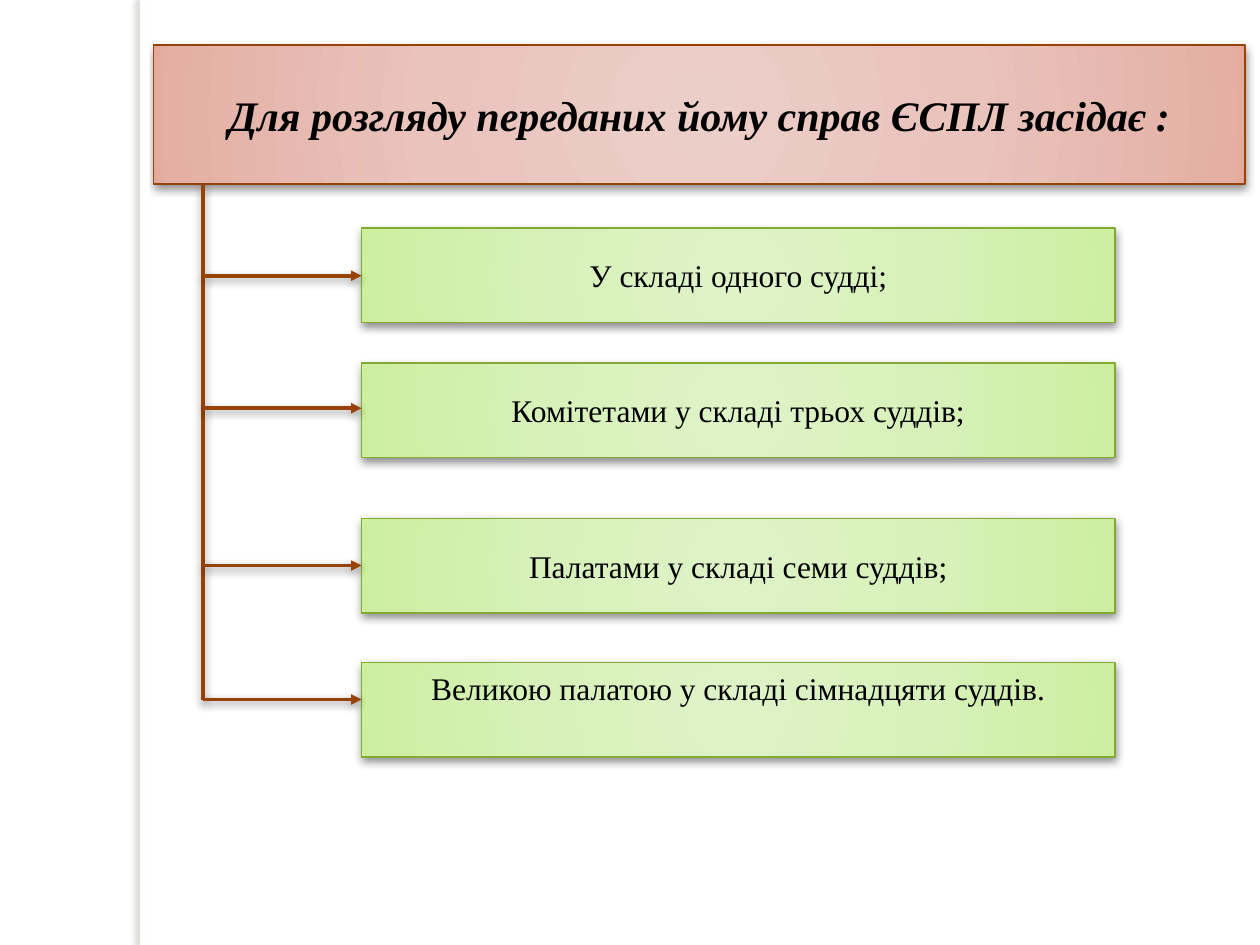
import pptx
import pptx.dml.color
import pptx.enum.shapes
import pptx.enum.text
import pptx.oxml
import pptx.oxml.ns
import pptx.util

Cm = pptx.util.Cm
Pt = pptx.util.Pt
RGBColor = pptx.dml.color.RGBColor
MSO_SHAPE = pptx.enum.shapes.MSO_SHAPE
MSO_ANCHOR = pptx.enum.text.MSO_ANCHOR

FONT = "Times New Roman"
BLACK = RGBColor(0x00, 0x00, 0x00)
WHITE = RGBColor(0xFF, 0xFF, 0xFF)
BROWN = RGBColor(0x96, 0x43, 0x05)
GREEN = RGBColor(0x84, 0xAA, 0x33)
STONE = RGBColor(0x73, 0x6F, 0x63)
PINKS = (
    (0, RGBColor(0xEC, 0xCE, 0xC9)),
    (50, RGBColor(0xE9, 0xC3, 0xBC)),
    (97, RGBColor(0xE4, 0xAF, 0xA4)),
    (100, RGBColor(0xE4, 0xA8, 0x9B)),
)
LIMES = (
    (0, RGBColor(0xDF, 0xF3, 0xC7)),
    (50, RGBColor(0xD8, 0xF1, 0xBA)),
    (97, RGBColor(0xCD, 0xEF, 0xA2)),
    (100, RGBColor(0xCA, 0xF1, 0x99)),
)
NS = pptx.oxml.ns.nsdecls("a")

STEM_X = 4.09
BOX_LEFT = 7.29
ROWS = (
    ("У складі одного судді;", 4.6, 5.56, MSO_ANCHOR.MIDDLE),
    ("Комітетами у складі трьох суддів;", 7.32, 8.23, MSO_ANCHOR.MIDDLE),
    ("Палатами у складі семи суддів;", 10.46, 11.4, MSO_ANCHOR.MIDDLE),
    ("Великою палатою у складі сімнадцяти суддів.", 13.36, 14.1, MSO_ANCHOR.TOP),
)


def add_shadow(s, color=BLACK, alpha=43, blur=5, dist=2, angle=90):
    s._element.spPr.append(pptx.oxml.parse_xml(
        f'<a:effectLst {NS}><a:outerShdw blurRad="{Pt(blur)}" dist="{Pt(dist)}" '
        f'dir="{angle * 60000}" algn="ctr" rotWithShape="0"><a:srgbClr val="{color}">'
        f'<a:alpha val="{alpha * 1000}"/></a:srgbClr></a:outerShdw></a:effectLst>'))


def set_panel(s, stops, line_color):
    gs = "".join(f'<a:gs pos="{pos * 1000}"><a:srgbClr val="{color}"/></a:gs>'
                 for pos, color in stops)
    s._element.spPr.append(pptx.oxml.parse_xml(
        f'<a:gradFill {NS} rotWithShape="1"><a:gsLst>{gs}</a:gsLst><a:path path="circle">'
        '<a:fillToRect l="50000" t="50000" r="50000" b="50000"/></a:path></a:gradFill>'))
    s.line.color.rgb = line_color
    s.line.width = Pt(0.75)
    add_shadow(s)


def set_text(s, text, size=18, bold=False, italic=False, anchor=MSO_ANCHOR.MIDDLE):
    tf = s.text_frame
    tf.word_wrap = True
    tf.auto_size = pptx.enum.text.MSO_AUTO_SIZE.NONE
    tf.vertical_anchor = anchor
    p = tf.paragraphs[0]
    p.alignment = pptx.enum.text.PP_ALIGN.CENTER
    r = p.add_run()
    r.text = text
    r.font.name = FONT
    r.font.size = Pt(size)
    r.font.bold = bold
    r.font.italic = italic
    r.font.color.rgb = BLACK


def add_strip(slide):
    s = slide.shapes.add_shape(MSO_SHAPE.RECTANGLE, Cm(2.82), 0, Cm(0.2), Cm(19.05))
    s.fill.solid()
    s.fill.fore_color.rgb = WHITE
    s.line.fill.background()
    add_shadow(s, color=STONE, alpha=25, blur=3, dist=3, angle=180)


def add_title(slide, text):
    s = slide.shapes.title
    s.left, s.top, s.width, s.height = Cm(3.1), Cm(0.91), Cm(22), Cm(2.8)
    s._element.spPr.append(pptx.oxml.parse_xml(
        f'<a:prstGeom {NS} prst="roundRect"><a:avLst/></a:prstGeom>'))
    set_panel(s, PINKS, BROWN)
    set_text(s, text, size=24, bold=True, italic=True)


def add_box(slide, text, top, anchor):
    s = slide.shapes.add_shape(MSO_SHAPE.RECTANGLE, Cm(BOX_LEFT), Cm(top), Cm(15.19), Cm(1.9))
    set_panel(s, LIMES, GREEN)
    set_text(s, text, anchor=anchor)


def add_line(slide, x1, y1, x2, y2, arrow=False):
    s = slide.shapes.add_connector(
        pptx.enum.shapes.MSO_CONNECTOR.STRAIGHT, Cm(x1), Cm(y1), Cm(x2), Cm(y2))
    s.line.color.rgb = BROWN
    s.line.width = Pt(2)
    if arrow:
        s.line._get_or_add_ln().append(
            pptx.oxml.parse_xml(f'<a:tailEnd {NS} type="triangle"/>'))
    add_shadow(s)


def main():
    prs = pptx.Presentation()
    prs.slide_width, prs.slide_height = Cm(25.4), Cm(19.05)
    slide = prs.slides.add_slide(prs.slide_layouts[5])
    add_strip(slide)
    add_title(slide, "Для розгляду переданих йому справ ЄСПЛ засідає :")
    for text, top, arrow_y, anchor in ROWS:
        add_box(slide, text, top, anchor)
    add_line(slide, STEM_X, 3.73, STEM_X, 14.12)
    for text, top, arrow_y, anchor in ROWS:
        add_line(slide, STEM_X, arrow_y, BOX_LEFT, arrow_y, arrow=True)
    prs.save("out.pptx")


if __name__ == "__main__":
    main()
